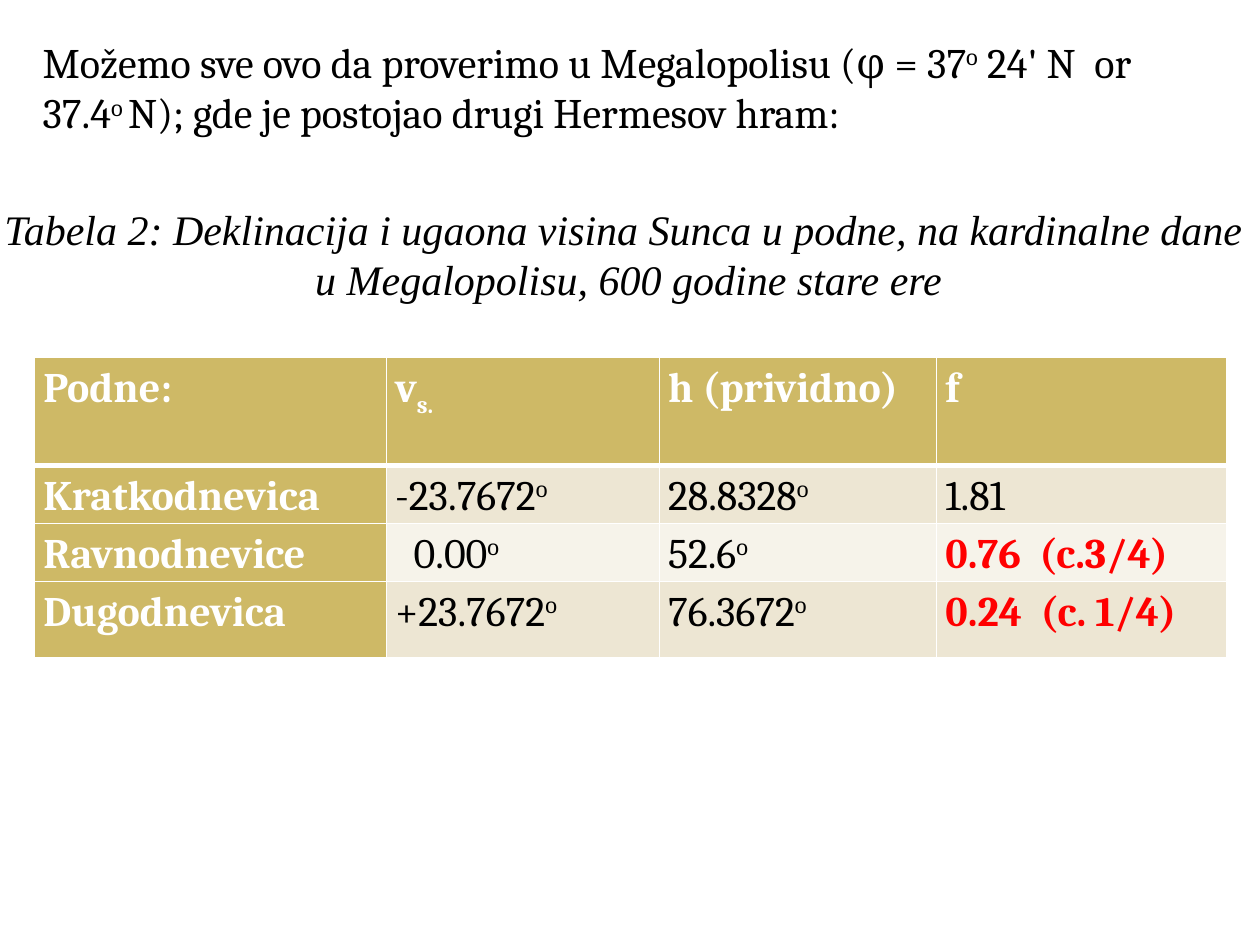
from lxml import etree
from pptx import Presentation
from pptx.dml.color import RGBColor
from pptx.enum.text import MSO_ANCHOR, MSO_AUTO_SIZE, PP_ALIGN
from pptx.oxml.ns import qn
from pptx.util import Pt

CENTER = PP_ALIGN.CENTER
MIDDLE, TOP = MSO_ANCHOR.MIDDLE, MSO_ANCHOR.TOP
GROW = MSO_AUTO_SIZE.SHAPE_TO_FIT_TEXT

BLACK = RGBColor(0x00, 0x00, 0x00)
WHITE = RGBColor(0xFF, 0xFF, 0xFF)
RED = RGBColor(0xFF, 0x00, 0x00)
GOLD = RGBColor(0xCE, 0xB9, 0x66)
SAND = RGBColor(0xED, 0xE6, 0xD3)
CREAM = RGBColor(0xF6, 0xF3, 0xEA)

# Each text is a list of (words, baseline shift in percent)
DEGREE = ("o", 30)
INTRO = [
    ("Možemo sve ovo da proverimo u Megalopolisu (φ = 37", 0), DEGREE,
    (" 24' N  or 37.4", 0), ("o ", 30),
    ("N); gde je postojao drugi Hermesov hram:", 0),
]
CAPTION_LINES = [
    "Tabela 2: Deklinacija i ugaona visina Sunca u podne, na kardinalne dane ",
    "u Megalopolisu, 600 godine stare ere",
]
HEADINGS = [[("Podne:", 0)], [("v", 0), ("s.", -25)],
            [("h (prividno)", 0)], [("f", 0)]]
# Day, declination, apparent height, ratio
DAYS = [
    ("Kratkodnevica", "-23.7672", "28.8328", "1.81"),
    ("Ravnodnevice", "0.00", "52.6", "0.76  (c.3/4)"),
    ("Dugodnevica", "+23.7672", "76.3672", "0.24  (c. 1/4)"),
]
COLUMN_WIDTHS = [201, 156, 158.5, 166]
ROW_HEIGHTS = [62, 30.4, 30.4, 43.6]

BODY = {"name": "Cambria", "size": Pt(24), "bold": False, "italic": False}
STRONG = {**BODY, "bold": True}
CAPTION = {**BODY, "name": "Times New Roman", "italic": True}


def set_all(target, values):
    for name, value in values.items():
        setattr(target, name, value)


def add_runs(paragraph, parts, style, color):
    for words, shift in parts:
        run = paragraph.add_run()
        run.text = words
        set_all(run.font, style)
        run.font.color.rgb = color
        if shift:
            run.font._element.set("baseline", str(shift * 1000))


def add_text_box(slide, left, top, width, height, frame_format):
    box = slide.shapes.add_textbox(Pt(left), Pt(top), Pt(width), Pt(height))
    set_all(box.text_frame, frame_format)
    return box.text_frame.paragraphs[0]


def set_borders(cell, widths):
    properties = cell._tc.get_or_add_tcPr()
    for side, width in zip("LRTB", widths):
        line = etree.SubElement(properties, qn(f"a:ln{side}"), w=str(Pt(width)))
        fill = etree.SubElement(line, qn("a:solidFill"))
        etree.SubElement(fill, qn("a:srgbClr"), val=str(WHITE))


def fill_cell(cell, parts, style, color, background, borders):
    set_all(cell, {"margin_left": Pt(5), "margin_right": Pt(5),
                   "margin_top": 0, "margin_bottom": 0})
    set_borders(cell, borders)
    cell.fill.solid()
    cell.fill.fore_color.rgb = background
    paragraph = cell.text_frame.paragraphs[0]
    paragraph.line_spacing = 1.15
    add_runs(paragraph, parts, style, color)
    return paragraph


def add_sun_table(slide):
    table = slide.shapes.add_table(
        len(ROW_HEIGHTS), len(COLUMN_WIDTHS), Pt(19.8), Pt(204),
        Pt(sum(COLUMN_WIDTHS)), Pt(sum(ROW_HEIGHTS))).table
    for column, width in zip(table.columns, COLUMN_WIDTHS):
        column.width = Pt(width)
    for row, height in zip(table.rows, ROW_HEIGHTS):
        row.height = Pt(height)

    # Heading row
    for column, parts in enumerate(HEADINGS):
        fill_cell(table.cell(0, column), parts, STRONG, WHITE, GOLD, (1, 1, 1, 3))

    # Cardinal days
    for row, (day, declination, height, ratio) in enumerate(DAYS, start=1):
        band = SAND if row % 2 else CREAM
        borders = (1, 1, 3 if row == 1 else 1, 1)
        ratio_style, ratio_color = (STRONG, RED) if "(" in ratio else (BODY, BLACK)
        cells = [
            ([(day, 0)], STRONG, WHITE, GOLD),
            ([(declination, 0), DEGREE], BODY, BLACK, band),
            ([(height, 0), DEGREE], BODY, BLACK, band),
            ([(ratio, 0)], ratio_style, ratio_color, band),
        ]
        for column, content in enumerate(cells):
            paragraph = fill_cell(table.cell(row, column), *content, borders)
            # Unsigned declination lines up past the sign
            if column == 1 and declination[0] not in "+-":
                paragraph._p.get_or_add_pPr().set("marL", str(Pt(10.6)))


def main():
    presentation = Presentation()
    presentation.slide_width, presentation.slide_height = Pt(720), Pt(540)
    slide = presentation.slides.add_slide(presentation.slide_layouts[6])

    # Introduction
    intro = add_text_box(slide, 17.3, 17.3, 684, 94.3, {
        "word_wrap": True, "auto_size": GROW, "vertical_anchor": TOP})
    add_runs(intro, INTRO, BODY, BLACK)

    add_sun_table(slide)

    # Table caption
    caption = add_text_box(slide, -8, 112.3, 734.4, 65.5, {
        "word_wrap": False, "auto_size": GROW, "vertical_anchor": MIDDLE})
    caption.alignment = CENTER
    for index, line in enumerate(CAPTION_LINES):
        if index:
            caption.add_line_break()
        add_runs(caption, [(line, 0)], CAPTION, BLACK)

    presentation.save("out.pptx")


if __name__ == "__main__":
    main()
